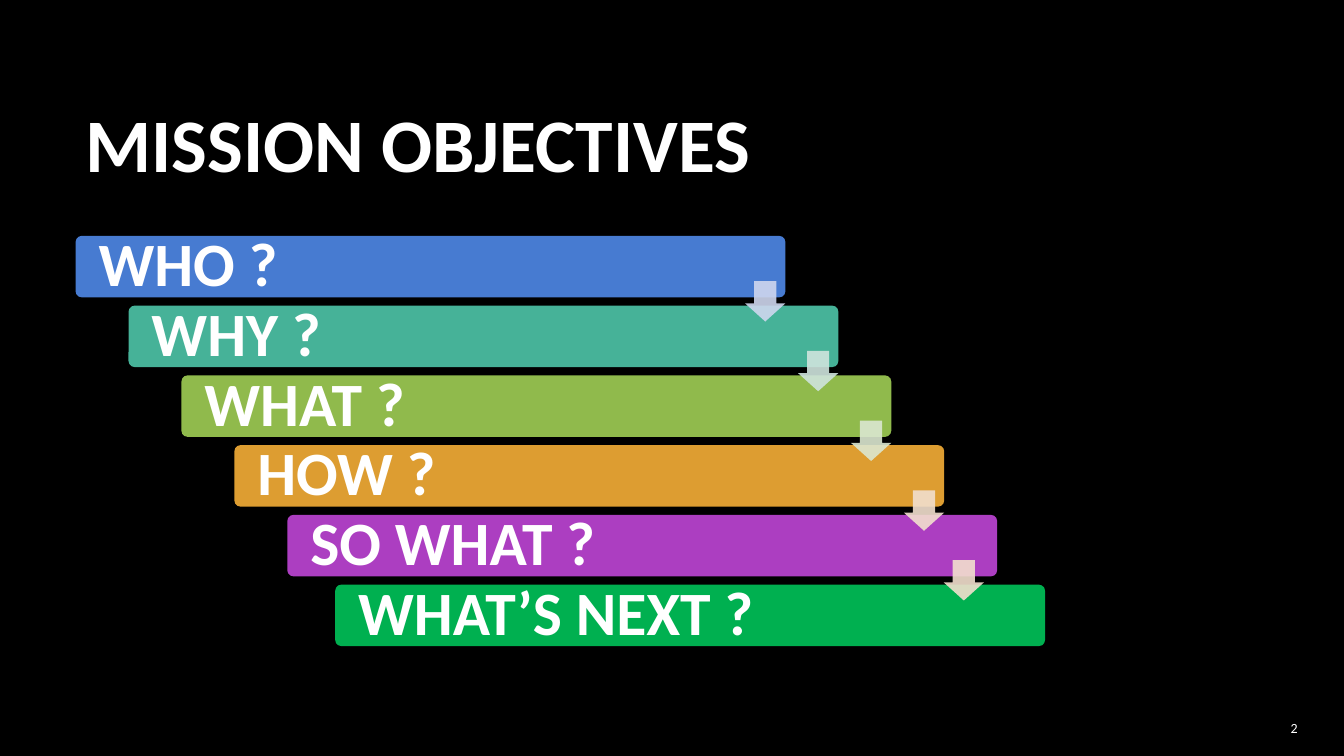
from lxml import etree
from pptx import Presentation
from pptx import util as u
from pptx.dml.color import RGBColor
from pptx.enum import shapes, text
from pptx.oxml.ns import qn

TITLE = "MISSION OBJECTIVES"
PAGE = "2"
FONT = "Calibri"
WHITE = "FFFFFF"

# label, bar colour, colour of the arrow to the next bar
STEPS = [
    ("WHO ?", "477BD1", "CFD7EE"),
    ("WHY ?", "46B298", "CFE4DD"),
    ("WHAT ?", "90BA4C", "DBE7D0"),
    ("HOW ?", "DD9D31", "F2DFCE"),
    ("SO WHAT ?", "AC3EC1", "F2DFCE"),
    ("WHAT’S NEXT ?", "00B050", None),
]

LEFT, TOP = 0.75, 2.34
WIDTH, HEIGHT = 7.04, 0.61
STEP_X, STEP_Y = 2.1 / 4, 3.46 / 5
LAST_BACK = 0.05       # the last bar sits a little left of the stair
ARROW = 0.4
ARROW_DROP = 0.45      # from a bar's top to its arrow's top
LAST_ARROW_BACK = 0.13


def color(code):
    return RGBColor.from_string(code)


def write(frame, words, size, bold=False, align=text.PP_ALIGN.LEFT):
    frame.word_wrap = True
    frame.auto_size = text.MSO_AUTO_SIZE.NONE
    frame.vertical_anchor = text.MSO_ANCHOR.MIDDLE
    frame.text = words
    para = frame.paragraphs[0]
    para.alignment = align
    font = para.font
    font.name, font.size, font.bold = FONT, u.Pt(size), bold
    font.color.rgb = color(WHITE)
    return para


def draw(kind, box, fill):
    """Add a flat preset shape with no line or shadow."""
    shape = slide.shapes.add_shape(kind, *map(u.Inches, box))
    shape.shadow.inherit = False
    shape.fill.solid()
    shape.fill.fore_color.rgb = color(fill)
    shape.line.fill.background()
    return shape


deck = Presentation()
deck.slide_width, deck.slide_height = u.Inches(13.33), u.Inches(7.5)
slide = deck.slides.add_slide(deck.slide_layouts[5])
slide.background.fill.solid()
slide.background.fill.fore_color.rgb = color("000000")

title = slide.shapes.title
title.left, title.top = u.Inches(0.75), u.Inches(0.67)
title.width, title.height = u.Inches(11.62), u.Inches(1.59)
write(title.text_frame, TITLE, 54, True).line_spacing = 0.9

last = len(STEPS) - 1
for i, (label, fill, _) in enumerate(STEPS):
    x = LEFT + i * STEP_X - (LAST_BACK if i == last else 0)
    bar = draw(shapes.MSO_SHAPE.ROUNDED_RECTANGLE,
               (x, TOP + i * STEP_Y, WIDTH, HEIGHT), fill)
    bar.adjustments[0] = 0.1
    frame = bar.text_frame
    frame.margin_left = frame.margin_top = frame.margin_bottom = u.Inches(0.21)
    frame.margin_right = u.Inches(1.38)
    write(frame, label, 44, True).line_spacing = 0.9

for i, (_, _, fill) in enumerate(STEPS[:-1]):
    x = LEFT + i * STEP_X + WIDTH - ARROW
    if i == last - 1:
        x -= LAST_ARROW_BACK
    arrow = draw(shapes.MSO_SHAPE.DOWN_ARROW,
                 (x, TOP + i * STEP_Y + ARROW_DROP, ARROW, ARROW), fill)
    arrow.adjustments[0], arrow.adjustments[1] = 0.55, 0.45
    tint = arrow.fill._xPr.find(qn("a:solidFill"))[0]
    etree.SubElement(tint, qn("a:alpha"), val="90000")

page = slide.shapes.add_textbox(*map(u.Inches, (12.37, 7.02, 0.6, 0.41)))
write(page.text_frame, PAGE, 10, align=text.PP_ALIGN.RIGHT)

deck.save("out.pptx")
